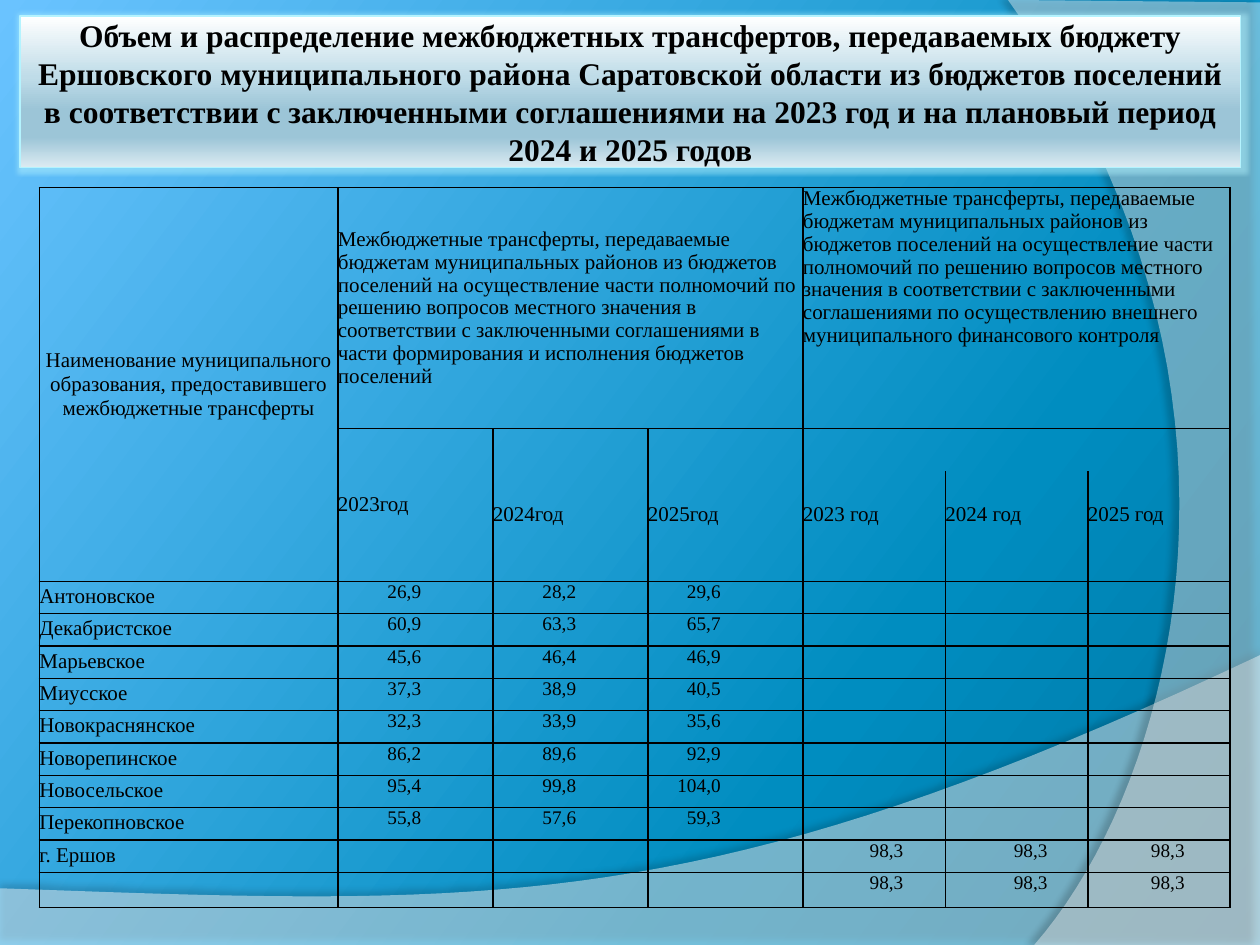
from lxml import etree
from pptx import Presentation
from pptx.dml.color import RGBColor
from pptx.enum import text
from pptx.oxml import parse_xml
from pptx.oxml.ns import nsdecls, qn
from pptx.util import Pt

FONT = "Times New Roman"
BLACK = "000000"
HEADING = ("Объем и распределение межбюджетных трансфертов, передаваемых бюджету "
           "Ершовского муниципального района Саратовской области из бюджетов поселений "
           "в соответствии с заключенными соглашениями на 2023 год и на плановый период "
           "2024 и 2025 годов")
TRANSFERS = ("Межбюджетные трансферты, передаваемые бюджетам муниципальных районов из "
             "бюджетов поселений на осуществление части полномочий по решению вопросов "
             "местного значения в соответствии с заключенными соглашениями ")
BUDGETING = TRANSFERS + "в части формирования и исполнения бюджетов поселений"
CONTROL = TRANSFERS + "по осуществлению внешнего муниципального финансового контроля"
SUPPLIER = "Наименование муниципального образования, предоставившего межбюджетные трансферты"
YEARS = ["2023год", "2024год", "2025год", "2023 год", "2024 год", "2025 год"]
SETTLEMENTS = [
    ("Антоновское", "26,9", "28,2", "29,6", "", "", ""),
    ("Декабристское", "60,9", "63,3", "65,7", "", "", ""),
    ("Марьевское", "45,6", "46,4", "46,9", "", "", ""),
    ("Миусское", "37,3", "38,9", "40,5", "", "", ""),
    ("Новокраснянское", "32,3", "33,9", "35,6", "", "", ""),
    ("Новорепинское", "86,2", "89,6", "92,9", "", "", ""),
    ("Новосельское", "95,4", "99,8", "104,0", "", "", ""),
    ("Перекопновское", "55,8", "57,6", "59,3", "", "", ""),
    ("г. Ершов", "", "", "", "98,3", "98,3", "98,3"),
    ("", "", "", "", "98,3", "98,3", "98,3"),
]
COLUMN_WIDTHS = [170.6] + [88.6] * 3 + [81.4] * 3
ROW_HEIGHTS = [137.8, 24.2, 63] + [18.5] * 9 + [20]
VALUE_MARGINS = [41, 41, 47, 24, 23, 26]  # space right of the figures


def rgb(color):
    return RGBColor.from_string(color)


def set_gradient(fill, owner, stops, angle):
    """Give the fill any number of (position %, colour) stops."""
    fill.gradient()
    old = owner.find(".//" + qn("a:gradFill"))
    marks = "".join(f'<a:gs pos="{pos * 1000}"><a:srgbClr val="{color}"/></a:gs>'
                    for pos, color in stops)
    old.getparent().replace(old, parse_xml(
        f'<a:gradFill {nsdecls("a")} rotWithShape="1"><a:gsLst>{marks}</a:gsLst>'
        f'<a:lin ang="{angle * 60000}" scaled="0"/></a:gradFill>'))


def set_effect(shape, effect):
    shape.shadow.inherit = False
    shape._element.spPr.find(qn("a:effectLst")).append(parse_xml(effect))


def curve(start, first, second, end, steps=40):
    """Points of a cubic curve, without its start."""
    points = []
    for step in range(1, steps + 1):
        t = step / steps
        weights = ((1 - t) ** 3, 3 * t * (1 - t) ** 2, 3 * t * t * (1 - t), t ** 3)
        points.append(tuple(sum(w * p[axis] for w, p in zip(weights, (start, first, second, end)))
                            for axis in (0, 1)))
    return points


def add_wave(slide, place, outline, opacity, shadow):
    """Translucent white wave behind everything else."""
    points = [(Pt(x), Pt(y)) for x, y in outline]
    builder = slide.shapes.build_freeform(*points[0])
    builder.add_line_segments(points[1:], close=True)
    wave = builder.convert_to_shape()
    wave.fill.solid()
    wave.fill.fore_color.rgb = rgb("FFFFFF")
    wave.line.fill.background()
    white = wave._element.spPr.find(".//" + qn("a:srgbClr"))
    etree.SubElement(white, qn("a:alpha"), val=str(opacity * 1000))
    alpha, blur, distance, direction = shadow
    set_effect(wave, f'<a:outerShdw {nsdecls("a")} blurRad="{Pt(blur)}" dist="{Pt(distance)}" '
                     f'dir="{direction * 60000}" algn="ctr" rotWithShape="0"><a:srgbClr '
                     f'val="{BLACK}"><a:alpha val="{alpha * 1000}"/></a:srgbClr></a:outerShdw>')
    slide.shapes._spTree.insert(2 + place, wave._element)


def add_background(slide, width, height):
    set_gradient(slide.background.fill, slide._element,
                 [(0, "0076A1"), (30, "008DC0"), (100, "6AC3FF")], 217)
    lower = [(0, 507.6), (0, height), (width, height), (width, 374.4)]
    lower += curve(lower[-1], (402.5, 524.9), (281.5, 517.7), lower[0])
    add_wave(slide, 0, lower, 45, (35, 4, 3.5, 270))
    right = [(width, 1.4), (width, height), (591, height)]
    right += curve(right[-1], (673.2, 445.7), (733, 216), (576, 0))
    add_wave(slide, 1, right, 40, (45, 4, 4, 180))


def write(frame, words, size, align, bold=False, spacing=None):
    paragraph = frame.paragraphs[0]
    paragraph.alignment = align
    if spacing:
        paragraph.line_spacing = spacing
    if not words:
        paragraph._p.get_or_add_endParaRPr().set("sz", str(size * 100))
        return
    run = paragraph.add_run()
    run.text = words
    run.font.name, run.font.size, run.font.bold = FONT, Pt(size), bold
    run.font.color.rgb = rgb(BLACK)


def add_heading(slide, left, top, width, height):
    heading = slide.shapes.title
    heading.left, heading.top, heading.width, heading.height = map(Pt, (left, top, width, height))
    set_gradient(heading.fill, heading._element.spPr,
                 [(0, "FFFFFF"), (40, "BFDCE8"), (62, "9CC5D7"), (80, "9CC5D7"), (100, "DCEBF2")], 90)
    heading.line.color.rgb = rgb("B4F3FE")
    heading.line.width = Pt(0.75)
    set_effect(heading, f'<a:glow {nsdecls("a")} rad="{Pt(5)}"><a:srgbClr val="B4F3FE">'
                        '<a:alpha val="50000"/></a:srgbClr></a:glow>')
    frame = heading.text_frame
    frame.word_wrap = True
    frame.auto_size = text.MSO_AUTO_SIZE.NONE
    frame.vertical_anchor = text.MSO_ANCHOR.MIDDLE
    frame.margin_left = frame.margin_right = frame.margin_top = frame.margin_bottom = Pt(3.6)
    write(frame, HEADING, 18, text.PP_ALIGN.CENTER, True, Pt(21.6))


def set_borders(cell, hidden):
    properties = cell._tc.get_or_add_tcPr()
    for place, side in enumerate("LRTB"):
        paint = ("<a:noFill/>" if side == hidden else
                 f'<a:solidFill><a:srgbClr val="{BLACK}"/></a:solidFill>')
        properties.insert(place, parse_xml(
            f'<a:ln{side} {nsdecls("a")} w="{Pt(1)}">{paint}</a:ln{side}>'))


def fill_cell(cell, words="", size=12, align=text.PP_ALIGN.LEFT, spacing=None,
              anchor=text.MSO_ANCHOR.TOP, above=0, right=0):
    cell.margin_left = cell.margin_bottom = 0
    cell.margin_top, cell.margin_right = Pt(above), Pt(right)
    cell.vertical_anchor = anchor
    write(cell.text_frame, words, size, align, spacing=spacing)


def add_transfers(slide, left, top):
    table = slide.shapes.add_table(
        len(ROW_HEIGHTS), len(COLUMN_WIDTHS), Pt(left), Pt(top),
        Pt(sum(COLUMN_WIDTHS)), Pt(sum(ROW_HEIGHTS))).table
    table.first_row = table.horz_banding = False
    for column, width in zip(table.columns, COLUMN_WIDTHS):
        column.width = Pt(width)
    for row, height in zip(table.rows, ROW_HEIGHTS):
        row.height = Pt(height)

    # Borders: the year cells are open towards the narrow row above them
    for r in range(len(ROW_HEIGHTS)):
        for c in range(len(COLUMN_WIDTHS)):
            cell = table.cell(r, c)
            cell.fill.background()
            set_borders(cell, {1: "B", 2: "T"}.get(r) if c > 1 else None)

    # Merged header cells
    for first, last in [((0, 0), (2, 0)), ((0, 1), (0, 3)), ((0, 4), (0, 6)),
                        ((1, 1), (2, 1)), ((1, 4), (1, 6))]:
        table.cell(*first).merge(table.cell(*last))
    middle = text.MSO_ANCHOR.MIDDLE
    fill_cell(table.cell(0, 0), SUPPLIER, align=text.PP_ALIGN.CENTER, spacing=Pt(13.7), anchor=middle)
    fill_cell(table.cell(0, 1), BUDGETING, spacing=Pt(13), anchor=middle)
    fill_cell(table.cell(0, 4), CONTROL, spacing=Pt(13))
    fill_cell(table.cell(1, 1), YEARS[0], spacing=Pt(13), anchor=middle)
    for c in range(2, 5):
        fill_cell(table.cell(1, c))
    for c, year in enumerate(YEARS[1:], 2):
        fill_cell(table.cell(2, c), year, spacing=1.15, above=15.9)

    # Settlements and their yearly transfers
    for r, (settlement, *amounts) in enumerate(SETTLEMENTS, 3):
        fill_cell(table.cell(r, 0), settlement, spacing=1.15)
        for c, (amount, margin) in enumerate(zip(amounts, VALUE_MARGINS), 1):
            fill_cell(table.cell(r, c), amount, 11, text.PP_ALIGN.RIGHT, right=margin)


def main():
    deck = Presentation()
    deck.slide_width, deck.slide_height = Pt(720), Pt(540)
    slide = deck.slides.add_slide(deck.slide_layouts[5])
    add_background(slide, 720, 540)
    add_heading(slide, 11.4, 9.2, 697.6, 86.6)
    add_transfers(slide, 22.5, 107.2)
    deck.save("out.pptx")


if __name__ == "__main__":
    main()
